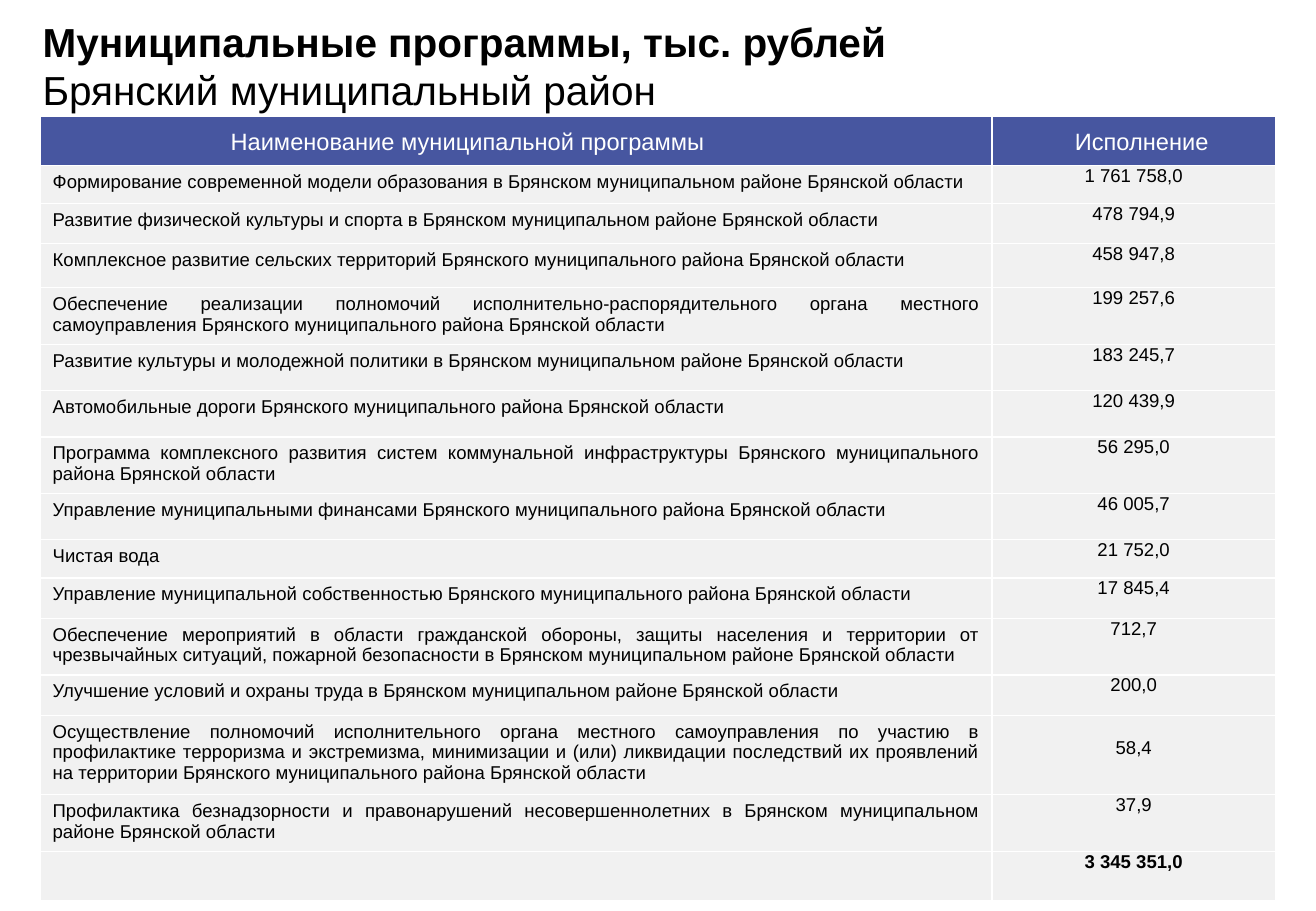
from pptx import Presentation
from pptx.dml.color import RGBColor
from pptx.enum import text as t
from pptx.util import Pt

LEFT, TOP = 24, 69
WIDTHS = (564, 168)
HEAD = 27.7
# Programme, amount, row height
ROWS = [
    ("Формирование современной модели образования в Брянском муниципальном районе Брянской области", "1 761 758,0", 22.6),
    ("Развитие физической культуры и спорта в Брянском муниципальном районе Брянской области", "478 794,9", 23.6),
    ("Комплексное развитие сельских территорий Брянского муниципального района Брянской области", "458 947,8", 26.2),
    ("Обеспечение реализации полномочий исполнительно-распорядительного органа местного самоуправления Брянского муниципального района Брянской области", "199 257,6", 33.6),
    ("Развитие культуры и молодежной политики в Брянском муниципальном районе Брянской области", "183 245,7", 27.4),
    ("Автомобильные дороги Брянского муниципального района Брянской области", "120 439,9", 27.4),
    ("Программа комплексного развития систем коммунальной инфраструктуры Брянского муниципального района Брянской области", "56 295,0", 33.6),
    ("Управление муниципальными финансами Брянского муниципального района Брянской области", "46 005,7", 27.4),
    ("Чистая вода", "21 752,0", 22.8),
    ("Управление муниципальной собственностью Брянского муниципального района Брянской области", "17 845,4", 23.8),
    ("Обеспечение мероприятий в области гражданской обороны, защиты населения и территории от чрезвычайных ситуаций, пожарной безопасности в Брянском муниципальном районе Брянской области", "712,7", 33.6),
    ("Улучшение условий и охраны труда в Брянском муниципальном районе Брянской области", "200,0", 24),
    ("Осуществление полномочий исполнительного органа местного самоуправления по участию в профилактике терроризма и экстремизма, минимизации и (или) ликвидации последствий их проявлений на территории Брянского муниципального района Брянской области", "58,4", 47),
    ("Профилактика безнадзорности и правонарушений несовершеннолетних в Брянском муниципальном районе Брянской области", "37,9", 33.6),
    ("", "3 345 351,0", 27.7),
]
LOW = 12  # row whose amount sits one line lower


def color(code):
    return RGBColor.from_string(code)


class Page:
    font, ink, white, blue, gray = "Arial", "000000", "FFFFFF", "4756A0", "F1F1F1"

    def __init__(self, deck):
        self.slide = deck.slides.add_slide(deck.slide_layouts[5])

    def put(self, frame, words, size, ink, align, bold=False):
        """Set the words of a frame and format them."""
        frame.text = words
        for para in frame.paragraphs:
            para.alignment = align
            for run in para.runs:
                font = run.font
                font.name, font.size, font.bold = self.font, Pt(size), bold
                font.color.rgb = color(ink)

    def title(self, first, second, box):
        shape = self.slide.shapes.title
        shape.left, shape.top, shape.width, shape.height = map(Pt, box)
        frame = shape.text_frame
        self.put(frame, first + "\v" + second, 24, self.ink, t.PP_ALIGN.LEFT)
        frame.word_wrap = False
        frame.auto_size = t.MSO_AUTO_SIZE.NONE
        frame.vertical_anchor = t.MSO_ANCHOR.TOP
        para = frame.paragraphs[0]
        para.line_spacing = Pt(29)
        para.runs[0].font.bold = True

    def label(self, words, box):
        frame = self.slide.shapes.add_textbox(*map(Pt, box)).text_frame
        frame.word_wrap = False
        self.put(frame, words, 14, self.white, t.PP_ALIGN.LEFT)

    def fill(self, cell, code):
        cell.fill.solid()
        cell.fill.fore_color.rgb = color(code)

    def table(self):
        high = HEAD + sum(row[2] for row in ROWS)
        box = map(Pt, (LEFT, TOP, sum(WIDTHS), high))
        grid = self.slide.shapes.add_table(len(ROWS) + 1, 2, *box).table
        for col, width in zip(grid.columns, WIDTHS):
            col.width = Pt(width)
        grid.rows[0].height = Pt(HEAD)
        for cell in grid.rows[0].cells:
            self.fill(cell, self.blue)
        for i, (name, amount, height) in enumerate(ROWS):
            row = grid.rows[i + 1]
            row.height = Pt(height)
            left, right = row.cells
            for cell in (left, right):
                self.fill(cell, self.gray)
            if name:
                self.put(left.text_frame, name, 11, self.ink, t.PP_ALIGN.JUSTIFY)
            right.margin_left = right.margin_right = right.margin_bottom = 0
            right.margin_top = Pt(13.5 if i == LOW else 0)
            self.put(right.text_frame, amount, 11, self.ink, t.PP_ALIGN.CENTER, not name)


def main():
    deck = Presentation()
    deck.slide_width, deck.slide_height = Pt(780), Pt(540)
    page = Page(deck)
    page.table()
    page.title("Муниципальные программы, тыс. рублей", "Брянский муниципальный район", (18, 6, 521, 65.5))
    page.label("Наименование муниципальной программы", (129.6, 71.5, 297.4, 24.5))
    page.label("Исполнение", (630, 71.5, 94.3, 24.5))
    deck.save("out.pptx")


if __name__ == "__main__":
    main()
